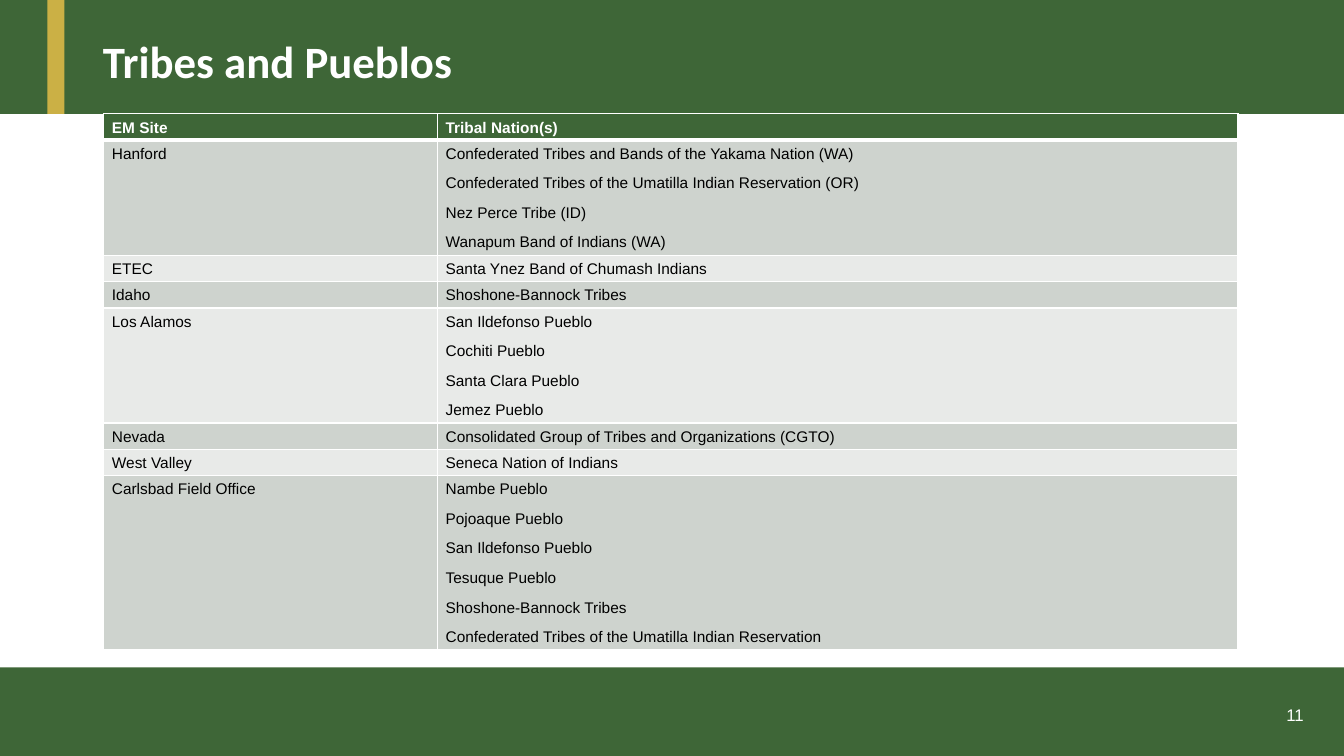
import dataclasses

import pptx
import pptx.dml.color
import pptx.enum.shapes
import pptx.enum.text
import pptx.oxml
import pptx.oxml.ns
import pptx.util

Inches = pptx.util.Inches
Pt = pptx.util.Pt
RGBColor = pptx.dml.color.RGBColor
ALIGN = pptx.enum.text.PP_ALIGN
MIDDLE = pptx.enum.text.MSO_ANCHOR.MIDDLE

GREEN = RGBColor(0x3E, 0x66, 0x37)
GOLD = RGBColor(0xCB, 0xB0, 0x45)
WHITE = RGBColor(0xFF, 0xFF, 0xFF)
BLACK = RGBColor(0, 0, 0)
DARK = RGBColor(0xCE, 0xD3, 0xCE)
LIGHT = RGBColor(0xE8, 0xEA, 0xE8)


@dataclasses.dataclass
class Bar:
    left: float
    top: float
    width: float
    height: float
    color: RGBColor


@dataclasses.dataclass
class Site:
    name: str
    tribes: list[str]


BARS = [
    Bar(0, 6.62, 13.33, 0.88, GREEN),
    Bar(0, 0, 13.33, 1.13, GREEN),
    Bar(0.47, 0, 0.17, 1.13, GOLD),
]
HEAD = Site("EM Site", ["Tribal Nation(s)"])
SITES = [
    Site("Hanford", [
        "Confederated Tribes and Bands of the Yakama Nation (WA)",
        "Confederated Tribes of the Umatilla Indian Reservation (OR)",
        "Nez Perce Tribe (ID)",
        "Wanapum Band of Indians (WA)",
    ]),
    Site("ETEC", ["Santa Ynez Band of Chumash Indians"]),
    Site("Idaho", ["Shoshone-Bannock Tribes"]),
    Site("Los Alamos", [
        "San Ildefonso Pueblo",
        "Cochiti Pueblo",
        "Santa Clara Pueblo",
        "Jemez Pueblo",
    ]),
    Site("Nevada", ["Consolidated Group of Tribes and Organizations (CGTO)"]),
    Site("West Valley", ["Seneca Nation of Indians"]),
    Site("Carlsbad Field Office", [
        "Nambe Pueblo",
        "Pojoaque Pueblo",
        "San Ildefonso Pueblo",
        "Tesuque Pueblo",
        "Shoshone-Bannock Tribes",
        "Confederated Tribes of the Umatilla Indian Reservation",
    ]),
]


def add_run(para, text: str, size: float, face: str, color: RGBColor,
            bold: bool = False) -> None:
    run = para.add_run()
    run.text = text
    run.font.size = Pt(size)
    run.font.name = face
    run.font.color.rgb = color
    run.font.bold = bold


def add_bar(slide, bar: Bar) -> None:
    shape = slide.shapes.add_shape(
        pptx.enum.shapes.MSO_SHAPE.RECTANGLE, Inches(bar.left),
        Inches(bar.top), Inches(bar.width), Inches(bar.height))
    shape.shadow.inherit = False
    shape.fill.solid()
    shape.fill.fore_color.rgb = bar.color
    shape.line.fill.background()


def set_title(slide, text: str) -> None:
    """Fill the title and bring it in front of the bars."""
    title = slide.shapes.title
    title.left, title.top = Inches(0.92), Inches(0.14)
    title.width, title.height = Inches(11.5), Inches(0.99)
    frame = title.text_frame
    frame.auto_size = pptx.enum.text.MSO_AUTO_SIZE.NONE
    frame.vertical_anchor = MIDDLE
    para = frame.paragraphs[0]
    para.alignment = ALIGN.LEFT
    para.line_spacing = 0.9
    add_run(para, text, 32, "Calibri", WHITE, True)
    slide.shapes.element.append(title.element)


def set_edge(cell, side: str, width: float) -> None:
    space = pptx.oxml.ns.nsdecls("a")
    cell.get_or_add_tcPr() if hasattr(cell, "get_or_add_tcPr") else None
    cell.append(pptx.oxml.parse_xml(
        f'<a:ln{side} {space} w="{Pt(width)}"><a:solidFill>'
        f'<a:srgbClr val="{WHITE}"/></a:solidFill></a:ln{side}>'))


def fill_cell(cell, lines: list[str], row: int) -> None:
    head = row == 0
    props = cell._tc.get_or_add_tcPr()
    set_edge(props, "L", 1)
    set_edge(props, "R", 1)
    set_edge(props, "T", 3 if row == 1 else 1)
    set_edge(props, "B", 3 if head else 1)
    cell.fill.solid()
    cell.fill.fore_color.rgb = GREEN if head else DARK if row % 2 else LIGHT
    cell.margin_left = cell.margin_right = Inches(0.08)
    cell.margin_top = cell.margin_bottom = Inches(0.04)
    frame = cell.text_frame
    for index, line in enumerate(lines):
        para = frame.add_paragraph() if index else frame.paragraphs[0]
        para.line_spacing = 1.07
        para.space_after = Pt(8)
        add_run(para, line, 11, "Arial", WHITE if head else BLACK, head)


def add_sites(slide) -> None:
    rows = [HEAD, *SITES]
    frame = slide.shapes.add_table(
        len(rows), 2, Inches(1.03), Inches(1.13), Inches(11.24), Inches(5.49))
    table = frame.table
    table.columns[0].width = Inches(3.31)
    table.columns[1].width = Inches(7.94)
    for row, site in enumerate(rows):
        extra = len(site.tribes) - 1
        table.rows[row].height = Inches(0.22 + 0.25 * extra)
        fill_cell(table.cell(row, 0), [site.name], row)
        fill_cell(table.cell(row, 1), site.tribes, row)
    frame.height = Inches(5.49)


def add_number(slide, text: str) -> None:
    box = slide.shapes.add_textbox(
        Inches(12.27), Inches(6.89), Inches(0.76), Inches(0.4))
    frame = box.text_frame
    frame.word_wrap = True
    frame.vertical_anchor = MIDDLE
    frame.margin_left = frame.margin_right = Inches(0.1)
    frame.margin_top = frame.margin_bottom = Inches(0.1)
    para = frame.paragraphs[0]
    para.alignment = ALIGN.RIGHT
    add_run(para, text, 12, "Arial", WHITE)


def main() -> None:
    deck = pptx.Presentation()
    deck.slide_width, deck.slide_height = Inches(13.33), Inches(7.5)
    slide = deck.slides.add_slide(deck.slide_layouts[5])
    for bar in BARS:
        add_bar(slide, bar)
    set_title(slide, "Tribes and Pueblos")
    add_sites(slide)
    add_number(slide, "11")
    deck.save("out.pptx")


if __name__ == "__main__":
    main()
